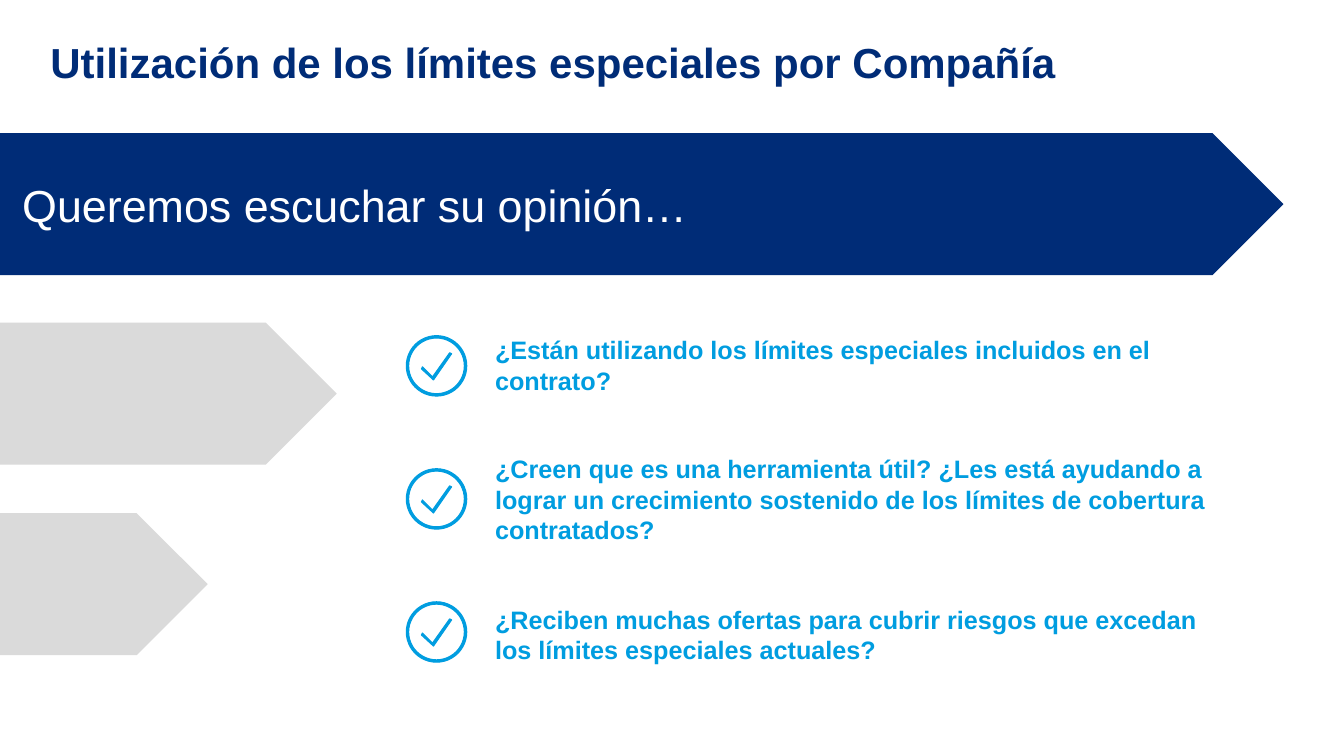
"""Builds the slide that asks for opinions on the special limits."""
from pptx import Presentation
from pptx.dml.color import RGBColor
from pptx.enum.shapes import MSO_SHAPE
from pptx.enum.text import MSO_ANCHOR, PP_ALIGN
from pptx.util import Inches, Pt

PENTAGON, DONUT = MSO_SHAPE.PENTAGON, MSO_SHAPE.DONUT
MIDDLE, LEFT = MSO_ANCHOR.MIDDLE, PP_ALIGN.LEFT
COLORS = {"navy": "002C77", "blue": "009DE0", "gray": "DADADA", "white": "FFFFFF"}


def paint(sp, color, line=False):
    sp.shadow.inherit = False
    sp.fill.solid()
    sp.fill.fore_color.rgb = RGBColor.from_string(COLORS[color])
    if line:
        sp.line.color.rgb = RGBColor.from_string(COLORS[color])
        sp.line.width = Pt(0.75)
    else:
        sp.line.fill.background()


def write(sp, text, size, color, bold=True, margin=0):
    tf = sp.text_frame
    tf.word_wrap = True
    tf.margin_left = Inches(margin)
    tf.margin_top = tf.margin_right = tf.margin_bottom = 0
    p = tf.paragraphs[0]
    p.alignment = LEFT
    r = p.add_run()
    r.text = text
    r.font.name = "Arial"
    r.font.size = Pt(size)
    r.font.bold = bold
    r.font.color.rgb = RGBColor.from_string(COLORS[color])
    return tf


prs = Presentation()
prs.slide_width, prs.slide_height = Inches(13.33), Inches(7.5)
s = prs.slides.add_slide(prs.slide_layouts[6])

title = s.shapes.add_textbox(Inches(0.5), Inches(0.39), Inches(12.31), Inches(0.54))
tf = write(title, "Utilización de los límites especiales por Compañía", 30, "navy")
tf.vertical_anchor = MIDDLE
tf.paragraphs[0].line_spacing = 0.8

arrows = []
for top, width, color in [(1.32, 12.73, "navy"), (3.2, 3.34, "gray"), (5.09, 2.06, "gray")]:
    arrow = s.shapes.add_shape(PENTAGON, 0, Inches(top), Inches(width), Inches(1.41))
    paint(arrow, color)
    arrows.append(arrow)
tf = write(arrows[0], "Queremos escuchar su opinión…", 32, "white", False, 0.22)
tf.vertical_anchor = MIDDLE

questions = [
    (3.32, 0.61, "¿Están utilizando los límites especiales incluidos en el contrato?"),
    (4.5, 0.91, "¿Creen que es una herramienta útil? ¿Les está ayudando a lograr un "
                "crecimiento sostenido de los límites de cobertura contratados?"),
    (5.99, 0.61, "¿Reciben muchas ofertas para cubrir riesgos que excedan los límites "
                 "especiales actuales?"),
]
tick_points = [(0.15, 0.33), (0.16, 0.31), (0.26, 0.41), (0.43, 0.17), (0.45, 0.18), (0.27, 0.44)]
for i, (top, height, question) in enumerate(questions):
    box = s.shapes.add_textbox(Inches(4.91), Inches(top), Inches(7.22), Inches(height))
    write(box, question, 18, "blue")

    icon_left, icon_top = 4.03, 3.33 + 1.32 * i
    ring = s.shapes.add_shape(DONUT, Inches(icon_left), Inches(icon_top), Inches(0.6), Inches(0.6))
    ring.adjustments[0] = 0.04
    paint(ring, "blue", line=True)

    points = [(Inches(icon_left + x), Inches(icon_top + y)) for x, y in tick_points]
    fb = s.shapes.build_freeform(*points[0])
    fb.add_line_segments(points[1:], close=True)
    paint(fb.convert_to_shape(), "blue", line=True)

prs.save("out.pptx")
